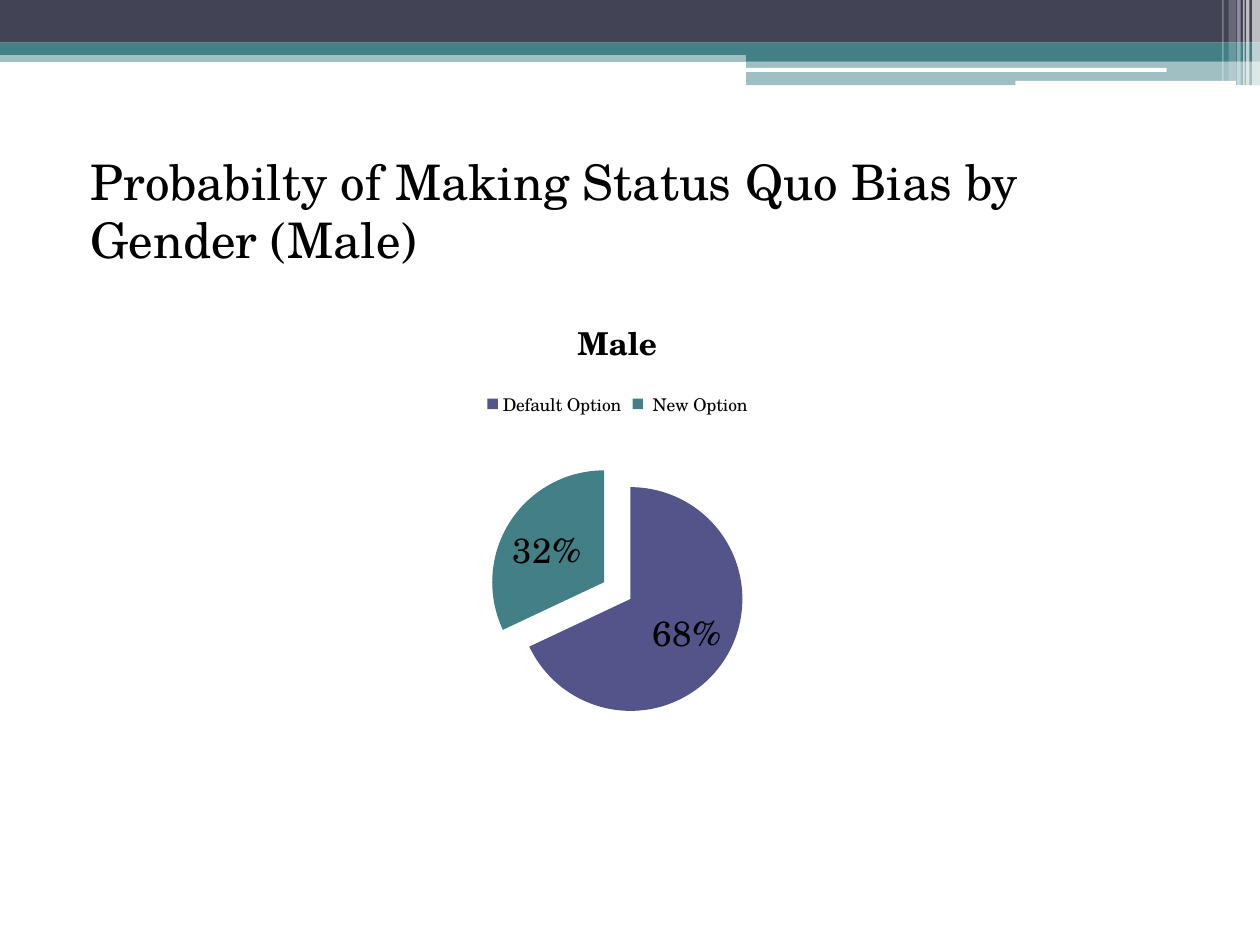
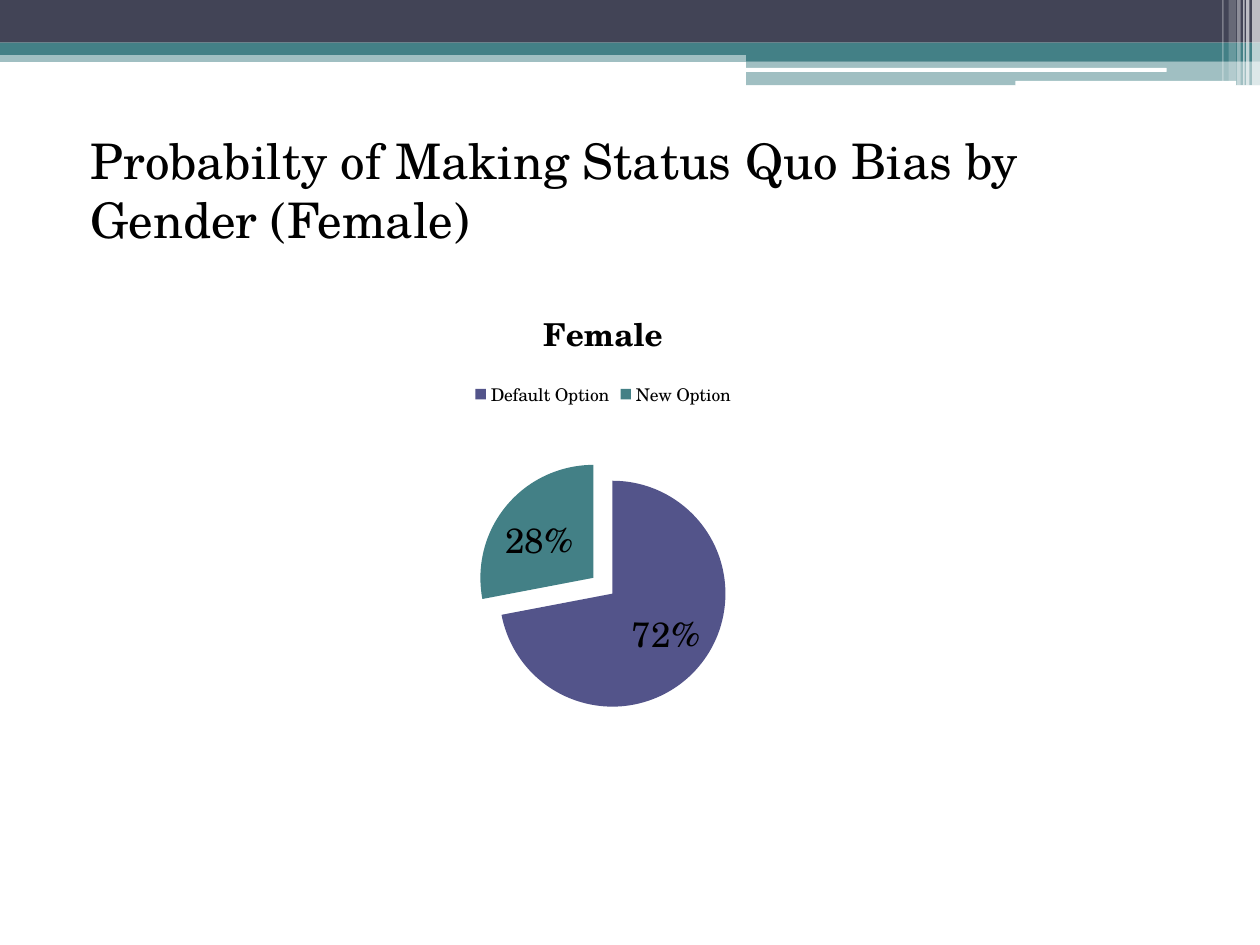
from dataclasses import dataclass

from lxml.etree import SubElement
from pptx import Presentation
from pptx.chart.data import CategoryChartData
from pptx.dml.color import RGBColor
from pptx.enum.chart import XL_CHART_TYPE, XL_LEGEND_POSITION
from pptx.enum.shapes import MSO_SHAPE
from pptx.enum.text import MSO_ANCHOR, PP_ALIGN
from pptx.oxml import parse_xml
from pptx.oxml.ns import nsdecls, qn
from pptx.util import Cm, Pt


@dataclass(frozen=True)
class Theme:
    font: str = "TeX Gyre Schola"
    ink: str = "000000"
    white: str = "FFFFFF"
    slate: str = "424456"
    teal: str = "438086"
    violet: str = "53548A"
    head: int = 28
    name: int = 18
    label: int = 20
    small: int = 10


THEME = Theme()
WIDE, HIGH = 25.4, 19.05
SPLIT = 15.04  # left edge of the deeper right-hand bands

# left, top, width, height, colour, opacity in percent
BANDS = [
    (0, 1.02, WIDE, 0.23, THEME.teal, 50),
    (0, 0, WIDE, 0.86, THEME.slate, 100),
    (0, 0.86, WIDE, 0.25, THEME.teal, 100),
    (SPLIT, 0.99, WIDE - SPLIT, 0.25, THEME.teal, 100),
    (SPLIT, 1.24, WIDE - SPLIT, 0.48, THEME.teal, 50),
]
# left, top, width, height
RULES = [(15.01, 1.37, 8.51, 0.08), (20.47, 1.63, 4.45, 0.1)]
# left, width, height, opacity in percent
STRIPES = [
    (25.24, 0.16, 1.73, 65),
    (25.12, 0.07, 1.73, 65),
    (25.06, 0.03, 1.73, 60),
    (24.94, 0.07, 1.73, 40),
    (24.77, 0.15, 1.63, 20),
    (24.64, 0.03, 1.63, 30),
]


def add_block(slide, box, color, alpha=100, kind=MSO_SHAPE.RECTANGLE):
    block = slide.shapes.add_shape(kind, *map(Cm, box))
    block.shadow.inherit = False
    block.line.fill.background()
    block.fill.solid()
    block.fill.fore_color.rgb = RGBColor.from_string(color)
    if alpha < 100:
        tint = block.fill._xPr.find(".//" + qn("a:srgbClr"))
        SubElement(tint, qn("a:alpha"), val=str(alpha * 1000))


def add_header(slide):
    for *box, color, alpha in BANDS:
        add_block(slide, box, color, alpha)
    for box in RULES:
        add_block(slide, box, THEME.white, kind=MSO_SHAPE.ROUNDED_RECTANGLE)
    for left, width, height, alpha in STRIPES:
        add_block(slide, (left, 0, width, height), THEME.white, alpha)


def style(font, size, bold=False):
    font.name = THEME.font
    font.size = Pt(size)
    font.bold = bold
    font.color.rgb = RGBColor.from_string(THEME.ink)


def add_title(slide, text, top):
    box = slide.shapes.add_textbox(Cm(1.27), Cm(top), Cm(22.86), Cm(2.9))
    frame = box.text_frame
    frame.word_wrap = True
    frame.vertical_anchor = MSO_ANCHOR.TOP
    frame.margin_left = Cm(0.56)
    line = frame.paragraphs[0]
    line.text = text
    line.alignment = PP_ALIGN.LEFT
    line.space_before = Pt(3)
    style(line.runs[0].font, THEME.head)


def add_pie(slide, box, name, shares, burst):
    """Pie whose slices all stand off by burst percent of the radius."""
    data = CategoryChartData()
    data.categories = list(shares)
    data.add_series("Series 1", list(shares.values()))
    chart = slide.shapes.add_chart(
        XL_CHART_TYPE.PIE, *map(Cm, box), data).chart
    style(chart.font, THEME.small)

    chart.has_title = True
    title = chart.chart_title.text_frame.paragraphs[0]
    title.text = name
    style(title.runs[0].font, THEME.name, bold=True)

    chart.has_legend = True
    chart.legend.position = XL_LEGEND_POSITION.TOP
    chart.legend.include_in_layout = False

    plot = chart.plots[0]
    plot.vary_by_categories = True
    series = plot.series[0]
    series._element.find(qn("c:tx")).addnext(
        parse_xml(f'<c:explosion {nsdecls("c")} val="{burst}"/>'))
    for spot, color in enumerate((THEME.violet, THEME.teal)):
        fill = series.points[spot].format.fill
        fill.solid()
        fill.fore_color.rgb = RGBColor.from_string(color)

    labels = series.data_labels
    labels.show_value = False
    labels.show_percentage = True
    labels.number_format = "0%"
    labels.number_format_is_linked = False
    style(labels.font, THEME.label)


def add_page(deck, name, top, box, shares, burst):
    slide = deck.slides.add_slide(deck.slide_layouts[6])
    add_header(slide)
    add_title(
        slide, f"Probabilty of Making Status Quo Bias by Gender ({name})", top)
    add_pie(slide, box, name, shares, burst)


def main():
    deck = Presentation()
    deck.slide_width, deck.slide_height = Cm(WIDE), Cm(HIGH)
    add_page(deck, "Male", 2.92, (5.89, 5.92, 13.11, 9.4),
             {"Default Option": 68, " New Option": 32}, 14)
    add_page(deck, "Female", 2.51, (5.31, 5.72, 13.69, 9.6),
             {"Default Option": 72, "New Option": 28}, 11)
    deck.save("out.pptx")


if __name__ == "__main__":
    main()
